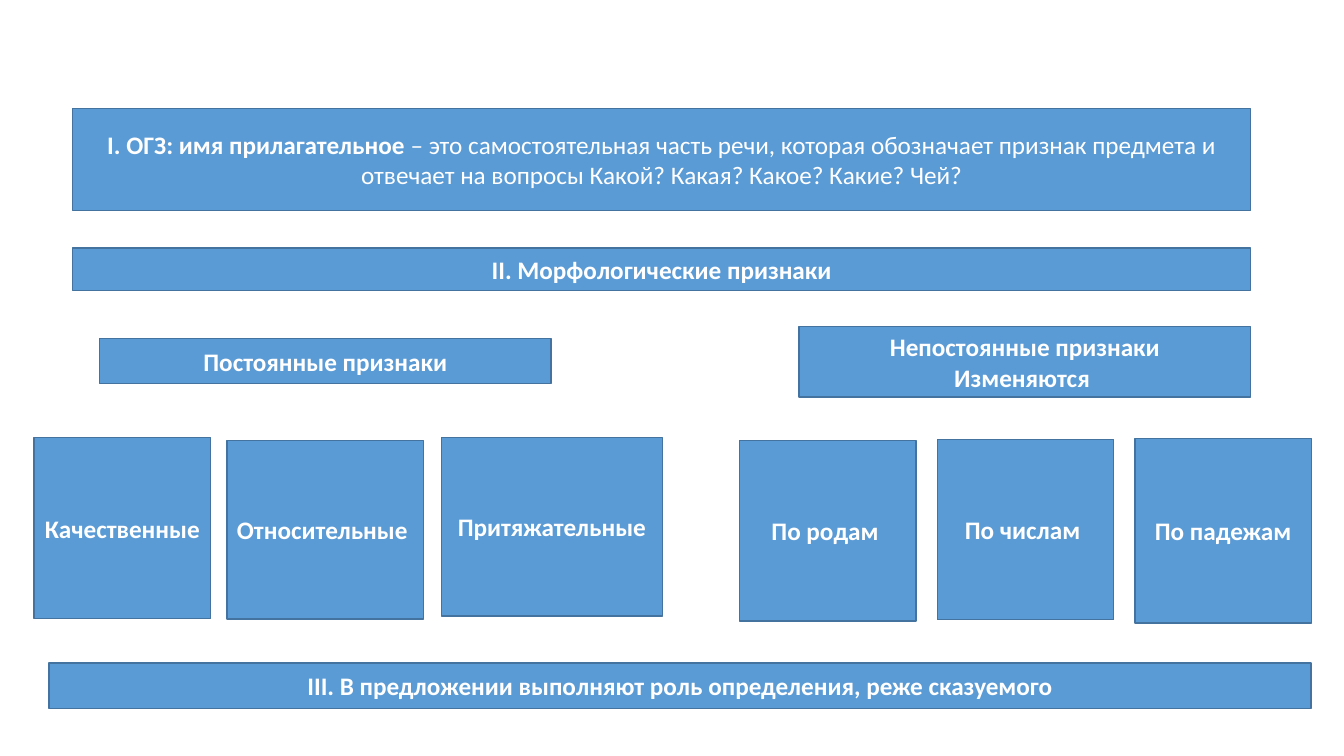
from pptx import Presentation
from pptx.dml.color import RGBColor
from pptx.enum.shapes import MSO_SHAPE
from pptx.enum.text import MSO_ANCHOR, PP_ALIGN
from pptx.util import Cm, Pt

RECT = MSO_SHAPE.RECTANGLE
MIDDLE = MSO_ANCHOR.MIDDLE
CENTER = PP_ALIGN.CENTER

BLUE = RGBColor(0x5B, 0x9B, 0xD5)
BORDER = RGBColor(0x43, 0x73, 0x9E)
WHITE = RGBColor(0xFF, 0xFF, 0xFF)

TERM = "I. ОГЗ: имя прилагательное "
DEFINITION = ("– это самостоятельная часть речи, которая обозначает признак предмета "
              "и отвечает на вопросы Какой? Какая? Какое? Какие? Чей?")

BANNERS = [
    ([[(TERM, True), (DEFINITION, False)]], (1.83, 2.74, 29.69, 2.57)),
    ([[("II. Морфологические признаки", True)]], (1.83, 6.25, 29.69, 1.07)),
    ([[("Постоянные признаки", True)]], (2.51, 8.53, 11.38, 1.14)),
    ([[("Непостоянные признаки", True)], [("Изменяются ", True)]],
     (20.14, 8.23, 11.38, 1.78)),
    ([[("III. В предложении выполняют роль определения, реже сказуемого", True)]],
     (1.24, 16.71, 31.8, 1.14)),
]
CONSTANT = [
    ("Качественные", (0.86, 11.02, 4.45, 4.57)),
    ("Относительные ", (5.72, 11.1, 4.95, 4.5)),
    ("Притяжательные", (11.13, 11.02, 5.56, 4.5)),
]
VARIABLE = [
    ("По родам ", 11.1, 4.55),
    ("По числам ", 11.07, 4.55),
    ("По падежам", 11.05, 4.65),
]
VARIABLE_LEFT, VARIABLE_STEP, VARIABLE_WIDTH = 18.64, 4.98, 4.45
FONT = {"name": "Calibri", "size": Pt(18)}


def add_box(s, paragraphs, place):
    sp = s.shapes.add_shape(RECT, *(Cm(v) for v in place))
    sp.shadow.inherit = False
    sp.fill.solid()
    sp.fill.fore_color.rgb = BLUE
    sp.line.color.rgb = BORDER
    sp.line.width = Pt(1)
    tf = sp.text_frame
    tf.word_wrap = True
    tf.vertical_anchor = MIDDLE
    for i, runs in enumerate(paragraphs):
        p = tf.add_paragraph() if i else tf.paragraphs[0]
        p.alignment = CENTER
        for text, bold in runs:
            r = p.add_run()
            r.text = text
            for key, value in {**FONT, "bold": bold}.items():
                setattr(r.font, key, value)
            r.font.color.rgb = WHITE


def main():
    prs = Presentation()
    prs.slide_width, prs.slide_height = Cm(33.87), Cm(19.05)
    s = prs.slides.add_slide(prs.slide_layouts[6])
    for paragraphs, place in BANNERS:
        add_box(s, paragraphs, place)
    for text, place in CONSTANT:
        add_box(s, [[(text, True)]], place)
    for i, (text, top, height) in enumerate(VARIABLE):
        left = VARIABLE_LEFT + i * VARIABLE_STEP
        add_box(s, [[(text, True)]], (left, top, VARIABLE_WIDTH, height))
    prs.save("out.pptx")


if __name__ == "__main__":
    main()
